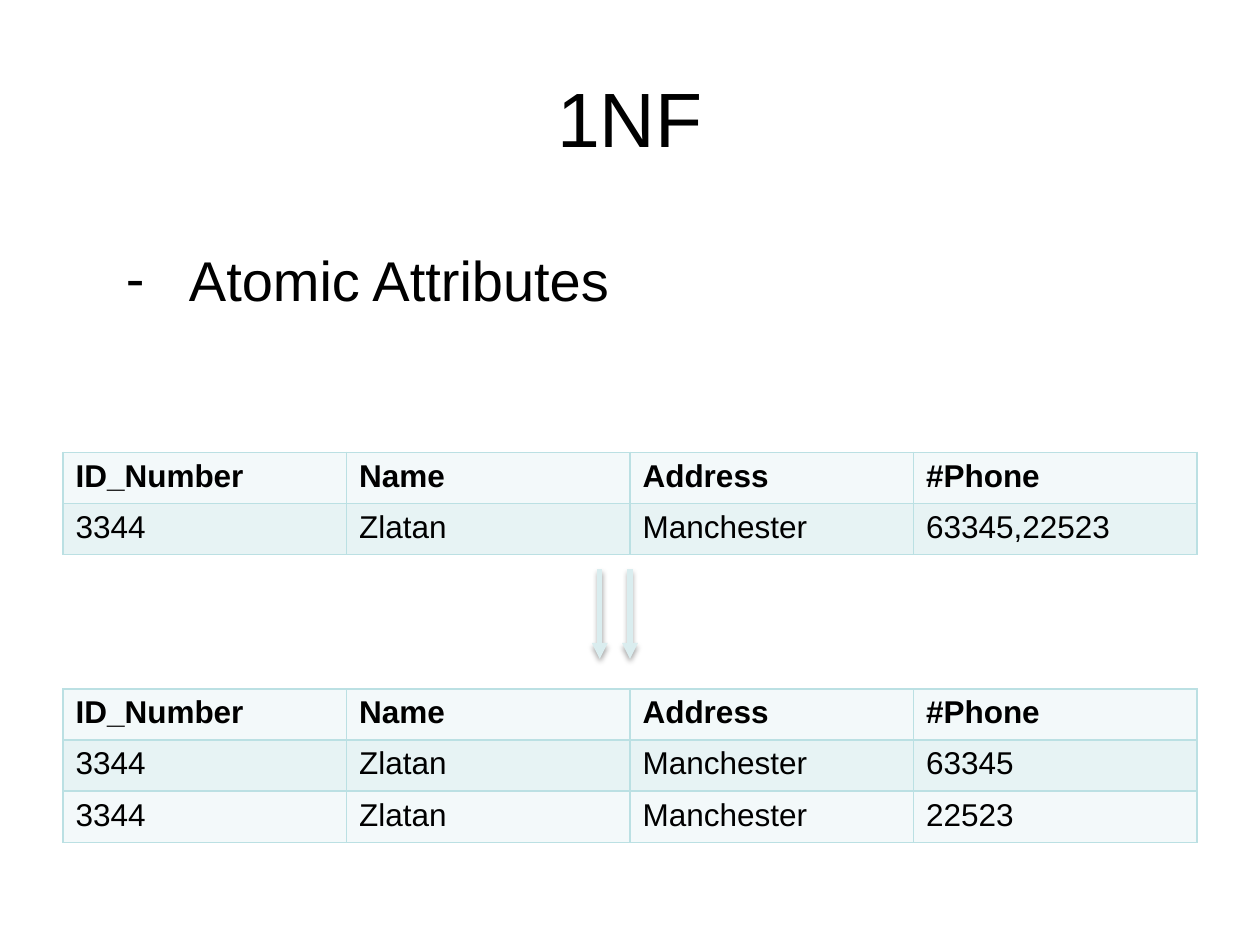
"""Build a slide that shows a table brought to first normal form."""
import pptx
import pptx.dml.color
import pptx.enum.shapes
import pptx.enum.text
import pptx.oxml
import pptx.oxml.ns
import pptx.util

Cm = pptx.util.Cm
Pt = pptx.util.Pt
NS = pptx.oxml.ns.nsdecls("a")


def rgb(value):
    return pptx.dml.color.RGBColor.from_string(value)


def xml(text):
    tag, rest = text.split(" ", 1)
    return pptx.oxml.parse_xml(f"{tag} {NS} {rest}")


class Deck:
    font = "Arial"
    ink = "000000"
    border = "BBE0E3"
    arrow_color = "DAEDEF"
    bands = ("F3F9FA", "E7F3F4")
    row_height = 1.03

    def __init__(self, width, height):
        self.prs = pptx.Presentation()
        self.prs.slide_width, self.prs.slide_height = Cm(width), Cm(height)
        self.s = self.prs.slides.add_slide(self.prs.slide_layouts[5])

    def set_text(self, tf, text, size, bold=False):
        tf.text = text
        p = tf.paragraphs[0]
        for r in p.runs:
            r.font.name, r.font.size, r.font.bold = self.font, Pt(size), bold
            r.font.color.rgb = rgb(self.ink)
        return p

    def title(self, text, x, y, w, h):
        sp = self.s.shapes.title
        sp.left, sp.top, sp.width, sp.height = Cm(x), Cm(y), Cm(w), Cm(h)
        sp.text_frame.vertical_anchor = pptx.enum.text.MSO_ANCHOR.MIDDLE
        p = self.set_text(sp.text_frame, text, 44)
        p.alignment = pptx.enum.text.PP_ALIGN.CENTER

    def bullet(self, text, x, y, w, h):
        sp = self.s.shapes.add_textbox(Cm(x), Cm(y), Cm(w), Cm(h))
        sp.text_frame.word_wrap = False
        pPr = self.set_text(sp.text_frame, text, 32)._p.get_or_add_pPr()
        pPr.set("marL", str(Cm(1.27)))
        pPr.set("indent", str(Cm(-1.27)))
        pPr.append(xml('<a:buFont typeface="Arial"/>'))
        pPr.append(xml('<a:buChar char="-"/>'))

    def table(self, rows, x, y, w):
        height = Cm(self.row_height * len(rows))
        frame = self.s.shapes.add_table(len(rows), len(rows[0]), Cm(x), Cm(y), Cm(w), height)
        for i, row in enumerate(rows):
            frame.table.rows[i].height = Cm(self.row_height)
            for j, text in enumerate(row):
                self.cell(frame.table.cell(i, j), text, self.bands[i % 2], i == 0)

    def cell(self, cell, text, fill, bold):
        self.set_text(cell.text_frame, text, 18, bold)
        tcPr = cell._tc.get_or_add_tcPr()
        for side in ("lnL", "lnR", "lnT", "lnB"):
            tcPr.append(xml(f'<a:{side} w="{Pt(1)}"><a:solidFill>'
                            f'<a:srgbClr val="{self.border}"/></a:solidFill></a:{side}>'))
        cell.fill.solid()
        cell.fill.fore_color.rgb = rgb(fill)

    def arrow(self, x, top, bottom):
        kind = pptx.enum.shapes.MSO_CONNECTOR.STRAIGHT
        sp = self.s.shapes.add_connector(kind, Cm(x), Cm(top), Cm(x), Cm(bottom))
        sp.line.color.rgb = rgb(self.arrow_color)
        sp.line.width = Pt(3)
        sp.line._get_or_add_ln().append(xml('<a:tailEnd type="triangle"/>'))
        sp._element.spPr.append(xml(
            f'<a:effectLst ><a:outerShdw blurRad="{Pt(3.1)}" dist="{Pt(1.8)}" dir="5400000" '
            'rotWithShape="0"><a:srgbClr val="000000"><a:alpha val="35000"/></a:srgbClr>'
            '</a:outerShdw></a:effectLst>'))


def main():
    header = ("ID_Number", "Name", "Address", "#Phone")
    person = ("3344", "Zlatan", "Manchester")
    phones = ("63345", "22523")
    deck = Deck(25.4, 19.05)
    deck.title("1NF", 1.27, 0.76, 22.86, 3.18)
    deck.table([header, (*person, ",".join(phones))], 1.27, 9.12, 22.86)
    deck.table([header, *((*person, phone) for phone in phones)], 1.27, 13.89, 22.86)
    for x in (12.09, 12.7):
        deck.arrow(x, 11.48, 13.28)
    deck.bullet("Atomic Attributes", 2.29, 4.83, 10.34, 3)
    deck.prs.save("out.pptx")


if __name__ == "__main__":
    main()
